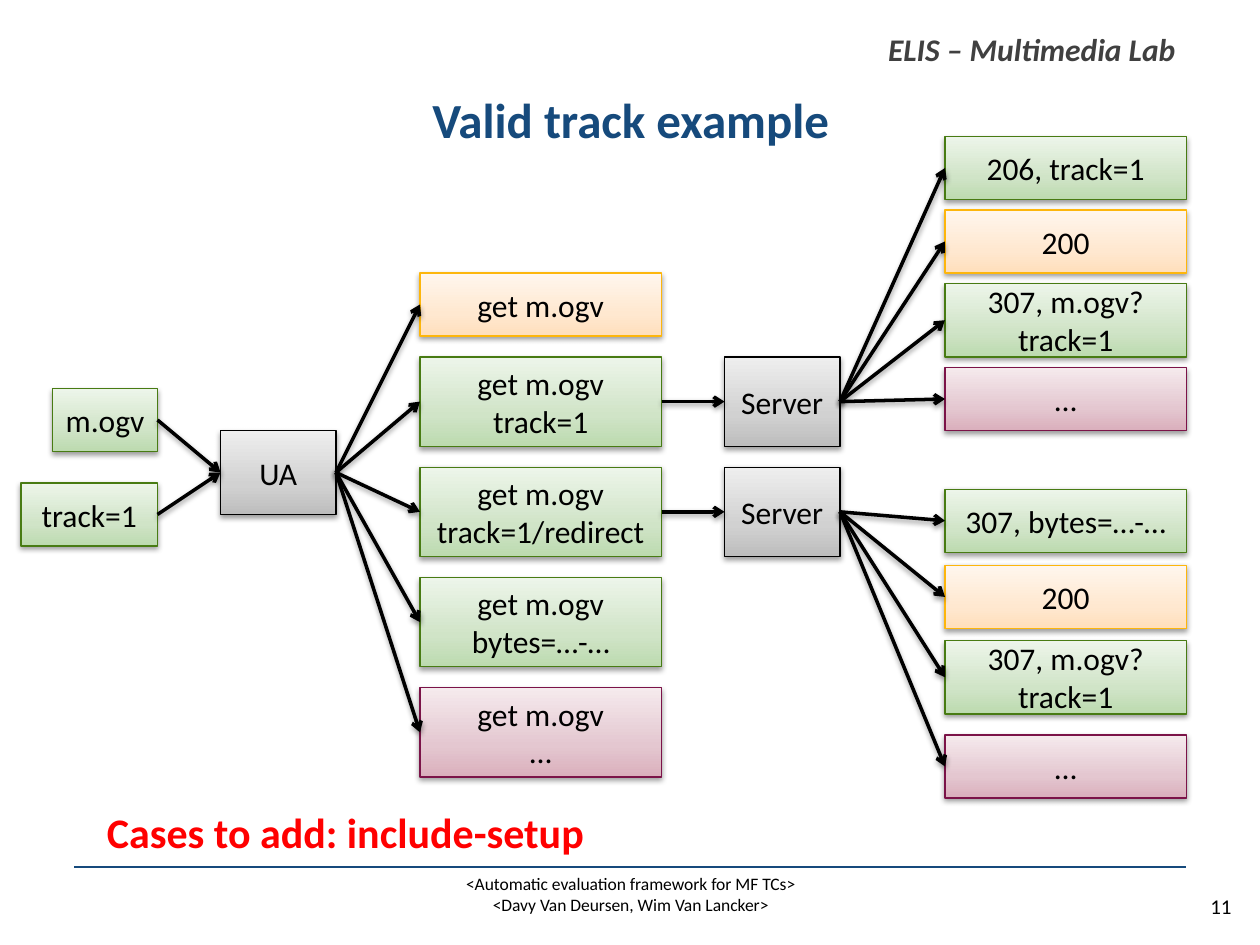
from copy import deepcopy
from pptx import Presentation
from pptx.dml.color import RGBColor
from pptx.enum.shapes import MSO_CONNECTOR as CONN, MSO_SHAPE as SHAPE
from pptx.enum.text import MSO_ANCHOR as ANCHOR, PP_ALIGN as ALIGN
from pptx.oxml import parse_xml
from pptx.oxml.ns import nsdecls, qn
from pptx.util import Inches, Pt

UNIT = Inches(1) / 12
STYLES = {
    "green": ("487B13", "BCDAAF", "D0E4C7", "EDF5EA"),
    "orange": ("FDB60C", "FFDFBC", "FFE8D0", "FFF6ED"),
    "pink": ("7B1348", "DAAFBC", "E4C7D0", "F5EAED"),
    "grey": ("000000", "BDBDBD", "D1D1D1", "EEEEEE"),
}
SHADOW = ('<a:outerShdw blurRad="40000" dist="20000" dir="5400000" rotWithShape="0">'
          '<a:srgbClr val="000000"><a:alpha val="38000"/></a:srgbClr></a:outerShdw>')


def grid(*cells):
    return [round(c * UNIT) for c in cells]


def rgb(value):
    return RGBColor.from_string(value)


def set_effect(shape, effect=""):
    shape._element.spPr.append(
        parse_xml(f"<a:effectLst {nsdecls('a')}>{effect}</a:effectLst>"))


def write(tf, text, size, colour="000000", align=ALIGN.CENTER, bold=False, italic=False):
    for i, line in enumerate(text.split("\n")):
        p = tf.paragraphs[0] if i == 0 else tf.add_paragraph()
        p.text, p.alignment = line, align
        p.font.name, p.font.size = "Calibri", Pt(size)
        p.font.bold, p.font.italic = bold, italic
        p.font.color.rgb = rgb(colour)


def add_text(slide, box, text, size, wrap=True, **style):
    tf = slide.shapes.add_textbox(*map(Inches, box)).text_frame
    tf.word_wrap = wrap
    write(tf, text, size, **style)


def add_box(slide, cells, text, style):
    outline, *shades = STYLES[style]
    sp = slide.shapes.add_shape(SHAPE.RECTANGLE, *grid(*cells))
    sp.fill.gradient()
    sp.fill.gradient_angle = 90
    stops = sp._element.spPr.find(qn("a:gradFill")).find(qn("a:gsLst"))
    stops.insert(1, deepcopy(stops[0]))
    for stop, position, shade in zip(sp.fill.gradient_stops, (0, 0.35, 1), shades):
        stop.position, stop.color.rgb = position, rgb(shade)
    sp.line.color.rgb, sp.line.width = rgb(outline), Pt(0.75)
    set_effect(sp, SHADOW)
    sp.text_frame.vertical_anchor = ANCHOR.MIDDLE
    write(sp.text_frame, text, 18)
    return sp


def add_column(slide, left, width, rows):
    return [add_box(slide, (left, top, width, height), text, style)
            for top, height, text, style in rows]


def add_arrow(slide, source, target):
    line = slide.shapes.add_connector(CONN.STRAIGHT, 0, 0, 0, 0)
    line.begin_connect(source, 3)
    line.end_connect(target, 1)
    line.line.color.rgb, line.line.width = rgb("000000"), Pt(2)
    line.line._get_or_add_ln().append(parse_xml(f'<a:tailEnd {nsdecls("a")} type="arrow"/>'))
    set_effect(line, SHADOW)


def add_frame(slide):
    add_text(slide, (9.38, 7.04, 0.62, 0.3), "11", 12)
    add_text(slide, (6.95, 0.19, 2.5, 0.4), "ELIS – Multimedia Lab", 18, wrap=False,
             colour="404040", align=ALIGN.JUSTIFY, bold=True, italic=True)
    add_text(slide, (0.59, 6.88, 8.83, 0.61),
             "<Automatic evaluation framework for MF TCs>\n<Davy Van Deursen, Wim Van Lancker>", 10)
    rule = slide.shapes.add_connector(CONN.STRAIGHT, *map(Inches, (0.59, 6.88, 9.41, 6.88)))
    rule.line.color.rgb, rule.line.width = rgb("164A7C"), Pt(1.5)
    set_effect(rule)


def add_title(slide, box, text):
    title = slide.shapes.title
    title.left, title.top, title.width, title.height = map(Inches, box)
    title.text_frame.vertical_anchor = ANCHOR.MIDDLE
    write(title.text_frame, text, 28, "164A7C", bold=True)


def add_flow(slide):
    inputs = [add_box(slide, (5, 37, 10, 6), "m.ogv", "green"),
              add_box(slide, (2, 46, 13, 6), "track=1", "green")]
    agent = add_box(slide, (21, 41, 11, 8), "UA", "grey")
    tall, pitch, first = 8.5, 10.5, 34
    details = [("track=1", "green"), ("track=1/redirect", "green"),
               ("bytes=…-…", "green"), ("…", "pink")]
    requests = add_column(slide, 40, 23, [(26, 6, "get m.ogv", "orange")] + [
        (first + i * pitch, tall, f"get m.ogv\n{detail}", style)
        for i, (detail, style) in enumerate(details)])
    servers = add_column(slide, 69, 11, [
        (first + i * pitch, tall, "Server", "grey") for i in range(2)])
    replies = [add_column(slide, 90, 23, rows) for rows in (
        [(13, 6, "206, track=1", "green"), (20, 6, "200", "orange"),
         (27, 7, "307, m.ogv?track=1", "green"), (35, 6, "…", "pink")],
        [(46.6, 6, "307, bytes=…-…", "green"), (53.85, 6, "200", "orange"),
         (61, 7, "307, m.ogv?track=1", "green"), (70, 6, "…", "pink")])]

    links = [(source, agent) for source in inputs]
    links += [(agent, request) for request in requests]
    links += zip(requests[1:], servers)
    links += [(server, reply) for server, group in zip(servers, replies) for reply in group]
    for source, target in links:
        add_arrow(slide, source, target)


def main():
    prs = Presentation()
    prs.slide_width, prs.slide_height = Inches(10), Inches(7.5)
    slide = prs.slides.add_slide(prs.slide_layouts[5])
    add_frame(slide)
    add_title(slide, (0.55, 0.58, 8.91, 0.73), "Valid track example")
    add_flow(slide)
    add_text(slide, (0.75, 6.35, 7.71, 0.5), "Cases to add: include-setup", 24,
             colour="FF0000", align=ALIGN.LEFT, bold=True)
    prs.save("out.pptx")


if __name__ == "__main__":
    main()
